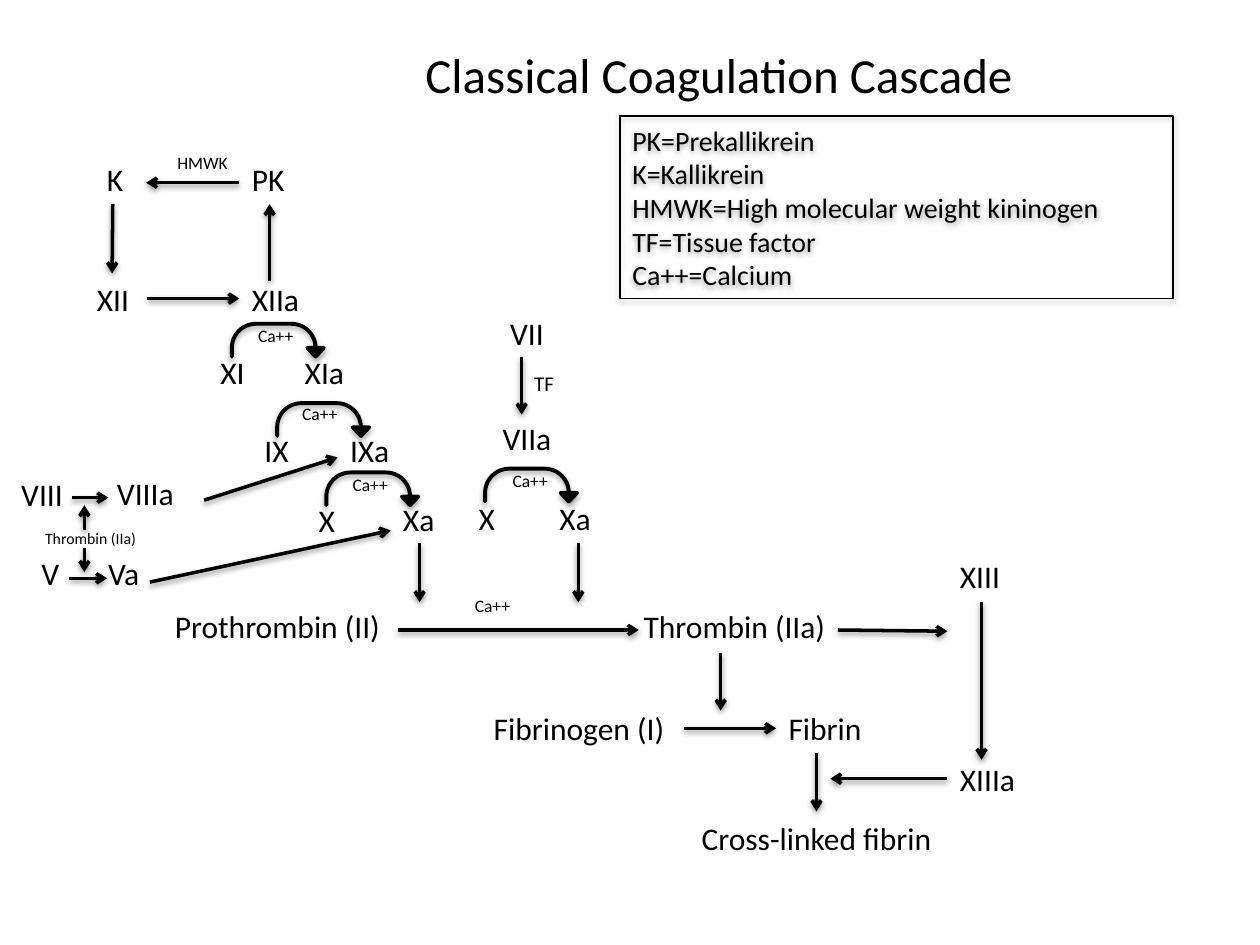
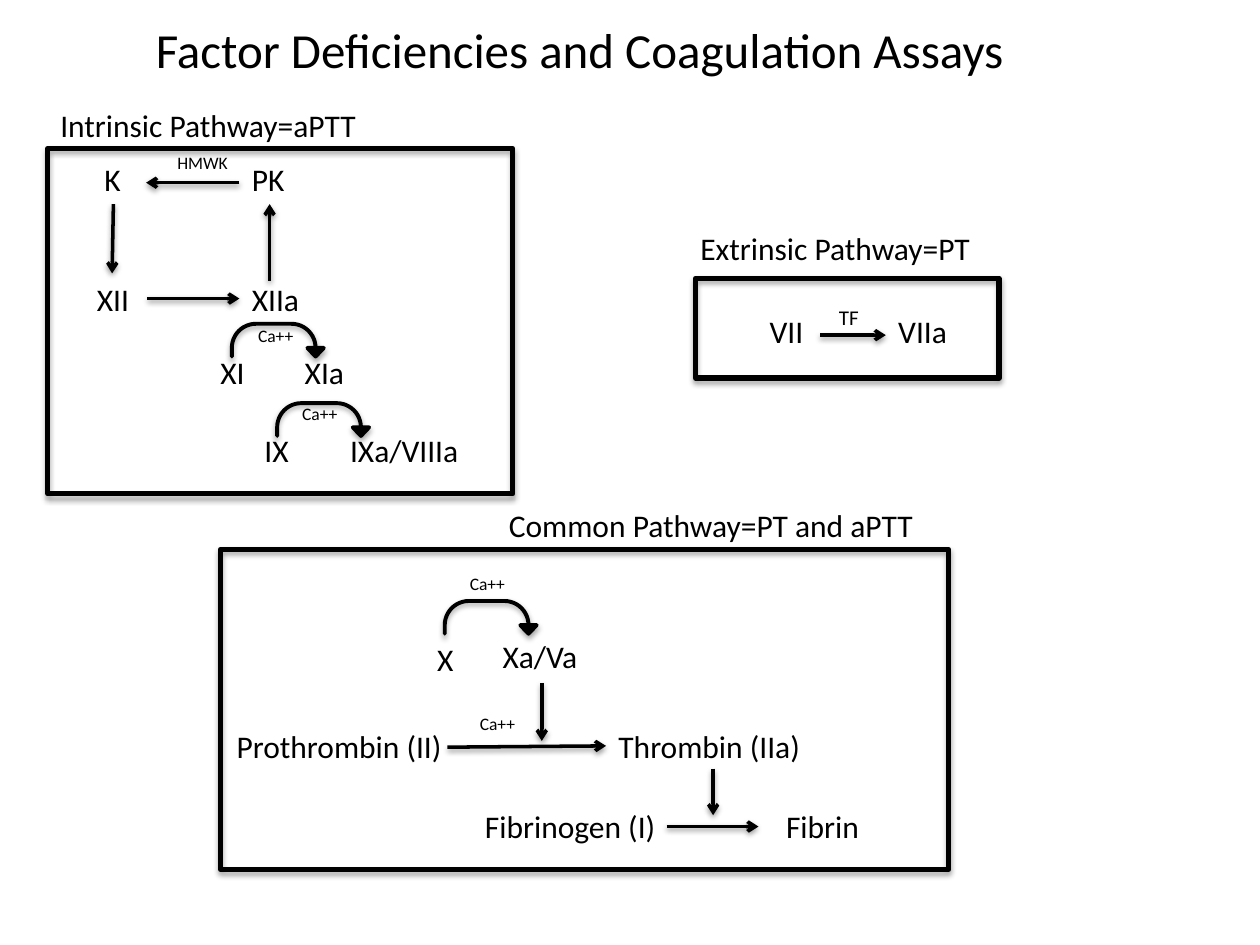
"""Build two slides on the coagulation cascade and its assays."""
from lxml.etree import SubElement
from pptx import Presentation
from pptx.dml.color import RGBColor
from pptx.enum.shapes import MSO_CONNECTOR, MSO_SHAPE
from pptx.enum.text import MSO_ANCHOR, PP_ALIGN
from pptx.oxml.ns import qn
from pptx.util import Inches, Pt

INK = "000000"
FONT = "Calibri"
ROW_HEIGHT = {18: 4, 12: 3, 10: 2.7, 9: 2.5}

prs = Presentation()
prs.slide_width, prs.slide_height = Inches(10), Inches(7.5)
COL = prs.slide_width // 100


def outline(shape, width, dist, alpha):
    """Give a shape or connector its dark line and soft drop shadow."""
    shape.line.color.rgb = RGBColor.from_string(INK)
    shape.line.width = Pt(width)
    spPr = shape._element.spPr
    effects = spPr.find(qn("a:effectLst"))
    if effects is None:
        effects = SubElement(spPr, qn("a:effectLst"))
    shadow = SubElement(effects, qn("a:outerShdw"), blurRad="40000", dist=str(dist),
                        dir="5400000", rotWithShape="0")
    clr = SubElement(shadow, qn("a:srgbClr"), val=INK)
    SubElement(clr, qn("a:alpha"), val=str(alpha * 1000))


def write(tf, lines, size, align=PP_ALIGN.LEFT):
    """Fill a text frame and format its runs."""
    tf.text = "\n".join(lines)
    tf.word_wrap = True
    for p in tf.paragraphs:
        p.alignment = align
        for r in p.runs:
            r.font.size = Pt(size)
            r.font.name = FONT
            r.font.color.rgb = RGBColor.from_string(INK)


contact_labels = [
    ("PK", 18, 19, 12.2, 7.6), ("HMWK", 10, 13.1, 11.6, 6.4),
    ("XII", 18, 6.7, 21.7, 6.6), ("XIIa", 18, 19, 21.7, 8.5),
    ("XI", 18, 16.5, 27.5, 4.5), ("XIa", 18, 23.2, 27.5, 5.8),
    ("IX", 18, 20, 33.7, 4.5),
    ("Ca++", 10, 19.5, 25.3, 5.2), ("Ca++", 10, 23, 31.5, 5.2),
]
contact_arrows = [
    (19, 14.5, 11.6, 14.5), (8.9, 16.2, 8.9, 21.7),
    (11.7, 23.7, 19, 23.7), (21.4, 22.3, 21.4, 16.2),
]
contact_turns = [(18.4, 25.7), (22, 32)]

cascade = {
    "title": ("Classical Coagulation Cascade", 31.7, 1.7, 50.7, 8.3),
    "labels": [
        ("K", 18, 7.5, 12.2, 2.9), ("IXa", 18, 26.8, 33.7, 6.4),
        ("X", 18, 24.3, 39.3, 3.1), ("Xa", 18, 31, 39.2, 5.6),
        ("Ca++", 10, 27, 37.1, 5.2),
        ("VIIIa", 18, 8.3, 37.1, 10.1), ("VIII", 18, 0.7, 37.2, 6.6),
        ("VII", 18, 39.5, 24.4, 5.4), ("VIIa", 18, 38.9, 32.8, 7.4),
        ("TF", 12, 41.4, 28.9, 5.2),
        ("X", 18, 37, 39.1, 3.1), ("Xa", 18, 43.4, 39.1, 5.8),
        ("Ca++", 10, 39.7, 36.8, 5.2), ("Ca++", 10, 36.7, 46.7, 5.2),
        ("Prothrombin (II)", 18, 12.9, 47.7, 19.3),
        ("Thrombin (IIa)", 18, 50.1, 47.7, 19.3),
        ("Fibrinogen (I)", 18, 38.2, 55.8, 17.1), ("Fibrin", 18, 61.6, 55.8, 10.9),
        ("XIII", 18, 75.2, 43.7, 7.3), ("XIIIa", 18, 75.2, 59.8, 7.7),
        ("Cross-linked fibrin", 18, 54.7, 64.5, 23.7),
        ("V", 18, 2.3, 43.5, 3.3), ("Va", 18, 7.6, 43.5, 7.2),
        ("Thrombin (IIa)", 9, 2.6, 41.5, 11.6),
    ],
    "arrows": [
        (5.7, 39.5, 8.6, 39.5), (16.2, 39.7, 26.8, 36.3),
        (5.5, 45.9, 8.5, 45.9), (11.9, 46.2, 31, 42.1),
        (6.7, 42.1, 6.7, 40.1), (6.7, 43.5, 6.7, 45.4),
        (41.4, 28.3, 41.4, 32.9), (33.3, 43.1, 33.3, 47.8),
        (45.9, 43.1, 45.9, 47.8), (31.6, 50, 50.7, 50),
        (57.2, 51.8, 57.2, 56.4), (54.3, 57.8, 61.6, 57.8),
        (66.5, 50, 75.2, 50.1), (77.9, 47.8, 77.9, 60.3),
        (64.8, 59.8, 64.8, 64.4), (75.2, 61.8, 65.9, 61.8),
    ],
    "turns": [(25.9, 37.5), (38.5, 37.2)],
    "frames": [(49.2, 9.2, 43.9, 14.5, 0.75, [
        "PK=Prekallikrein", "K=Kallikrein", "HMWK=High molecular weight kininogen",
        "TF=Tissue factor", "Ca++=Calcium"])],
}
assays = {
    "title": ("Factor Deficiencies and Coagulation Assays", 11.2, 0.4, 69.6, 6.9),
    "labels": [
        ("K", 18, 7.3, 12.2, 3.4), ("IXa/VIIIa", 18, 26.8, 33.7, 12.1),
        ("X", 18, 33.7, 50.3, 3.1), ("Xa/Va", 18, 38.9, 50.1, 10.8),
        ("Ca++", 10, 36.3, 45, 5.2), ("Ca++", 10, 37.1, 56.1, 5.2),
        ("Prothrombin (II)", 18, 17.8, 57.2, 19.3),
        ("Thrombin (IIa)", 18, 48.1, 57.2, 19.3),
        ("Fibrinogen (I)", 18, 37.5, 63.6, 17.1), ("Fibrin", 18, 61.4, 63.6, 10),
        ("VII", 18, 60.1, 24.3, 6.3), ("VIIa", 18, 70.3, 24.3, 7.1),
        ("TF", 12, 65.6, 23.7, 5.2),
        ("Intrinsic Pathway=aPTT", 18, 3.8, 7.9, 36.9),
        ("Extrinsic Pathway=PT", 18, 54.6, 17.7, 26.3),
        ("Common Pathway=PT and aPTT", 18, 39.4, 39.7, 39.8),
    ],
    "arrows": [
        (43, 54.2, 43, 58.8), (35.5, 59.3, 48, 59.3), (56.6, 61, 56.6, 64.7),
        (52.9, 65.6, 60.2, 65.6), (65.1, 26.6, 70.3, 26.6),
    ],
    "turns": [(35.3, 47.7)],
    "frames": [
        (3.8, 11.8, 36.9, 27.4, 3, []), (17.5, 43.6, 57.8, 25.4, 3, []),
        (55.2, 22.1, 24.1, 7.9, 3, []),
    ],
}

for page in (cascade, assays):
    s = prs.slides.add_slide(prs.slide_layouts[5])
    heading, *box = page["title"]
    title = s.shapes.title
    title.left, title.top, title.width, title.height = [int(v * COL) for v in box]
    write(title.text_frame, [heading], 28, PP_ALIGN.CENTER)
    title.text_frame.vertical_anchor = MSO_ANCHOR.MIDDLE

    for *box, weight, lines in page["frames"]:
        sp = s.shapes.add_shape(MSO_SHAPE.RECTANGLE, *[int(v * COL) for v in box])
        sp.shadow.inherit = False
        sp.fill.background()
        outline(sp, weight, 23000, 35)
        if lines:
            write(sp.text_frame, lines, 16)
            sp.text_frame.vertical_anchor = MSO_ANCHOR.MIDDLE

    sides = []
    for text, size, x, y, w in contact_labels + page["labels"]:
        h = ROW_HEIGHT[size]
        tb = s.shapes.add_textbox(*[int(v * COL) for v in (x, y, w, h)])
        write(tb.text_frame, [text], size)
        midpoints = (x + w / 2, y), (x, y + h / 2), (x + w / 2, y + h), (x + w, y + h / 2)
        sides += [(tb, site, mx, my) for site, (mx, my) in enumerate(midpoints)]

    for x, y in contact_turns + page["turns"]:
        turn = s.shapes.add_shape(MSO_SHAPE.U_TURN_ARROW,
                                  *[int(v * COL) for v in (x, y, 7.3, 2.6)])
        for i, value in enumerate((0, 0.25, 0.262, 0.738, 1)):
            turn.adjustments[i] = value
        turn.shadow.inherit = False
        turn.fill.solid()
        turn.fill.fore_color.rgb = RGBColor.from_string(INK)
        outline(turn, 2.25, 23000, 35)

    for x1, y1, x2, y2 in contact_arrows + page["arrows"]:
        arrow = s.shapes.add_connector(MSO_CONNECTOR.STRAIGHT,
                                       *[int(v * COL) for v in (x1, y1, x2, y2)])
        outline(arrow, 2, 20000, 38)
        SubElement(arrow.line._get_or_add_ln(), qn("a:tailEnd"), type="arrow")
        for tb, site, mx, my in sides:
            if abs(mx - x1) + abs(my - y1) < 0.25:
                arrow.begin_connect(tb, site)
            if abs(mx - x2) + abs(my - y2) < 0.25:
                arrow.end_connect(tb, site)

prs.save("out.pptx")
